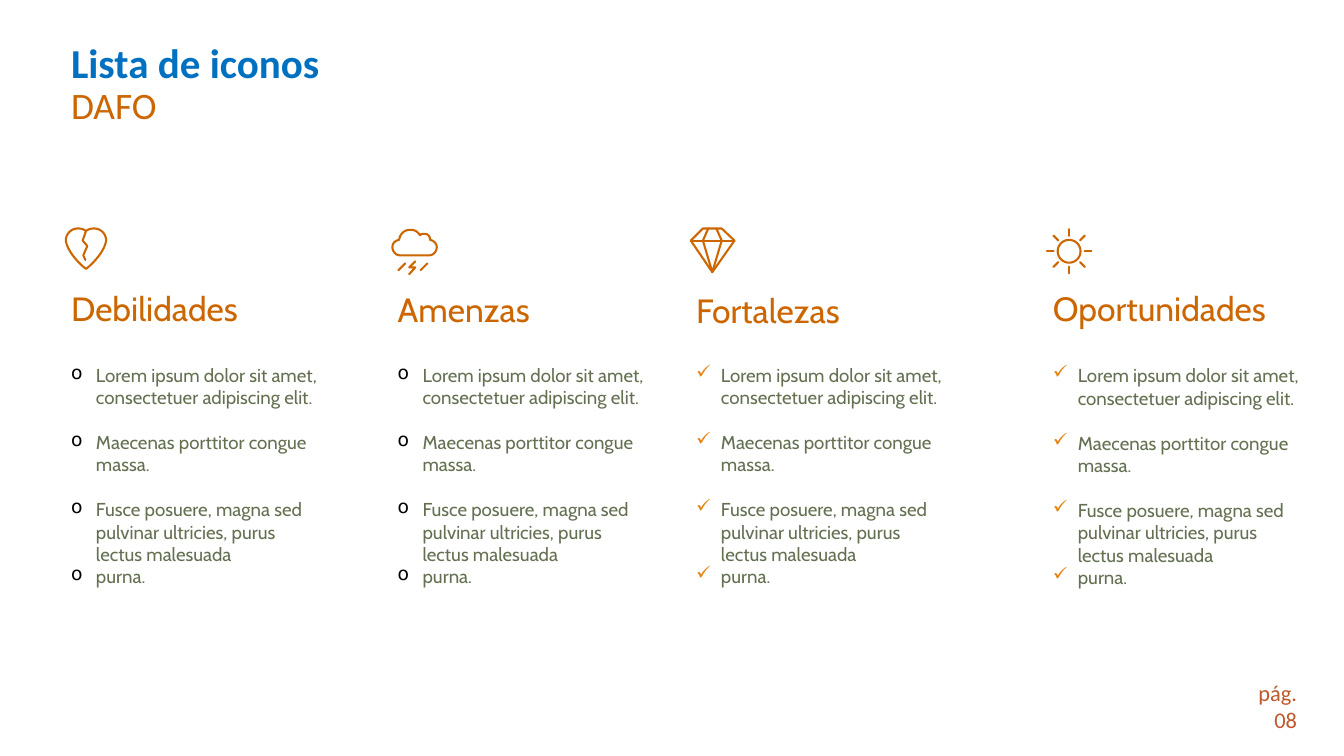
from math import cos, pi, sin

from lxml import etree
from pptx import Presentation
from pptx.dml.color import RGBColor
from pptx.enum.text import MSO_ANCHOR, MSO_AUTO_SIZE, PP_ALIGN
from pptx.oxml.ns import qn
from pptx.util import Inches, Pt

RIGHT = PP_ALIGN.RIGHT
MIDDLE = MSO_ANCHOR.MIDDLE
GROW = MSO_AUTO_SIZE.SHAPE_TO_FIT_TEXT

ORANGE = RGBColor(0xCC, 0x66, 0x00)
BLUE = RGBColor(0x00, 0x70, 0xC0)
OLIVE = RGBColor(0x63, 0x70, 0x52)
RUST = RGBColor(0xBD, 0x58, 0x2C)

CIRCLE_MARK = ("o", "000000")
CHECK_MARK = ("✓", "E48312")
CURVE_STEPS = 10

POINTS = [
    ("Lorem ipsum dolor sit amet, consectetuer adipiscing elit.", 0),
    ("Maecenas porttitor congue massa.", 24),
    ("Fusce posuere, magna sed pulvinar ultricies, purus lectus malesuada", 24),
    ("purna.", 0),
]


def smooth(controls):
    """Sample a chain of cubic Bézier curves given as 3n + 1 points."""
    samples = [controls[0]]
    for i in range(0, len(controls) - 1, 3):
        a, b, c, d = controls[i:i + 4]
        for step in range(1, CURVE_STEPS + 1):
            t = step / CURVE_STEPS
            u = 1 - t
            weights = (u ** 3, 3 * u * u * t, 3 * u * t * t, t ** 3)
            samples.append(tuple(
                sum(w * p[axis] for w, p in zip(weights, (a, b, c, d))) for axis in (0, 1)
            ))
    return samples


def broken_heart():
    """Return the strokes of the heart and its crack."""
    right = smooth([
        (0.32, 0.06), (0.35, 0.03), (0.4, 0.02), (0.44, 0.02),
        (0.54, 0.02), (0.62, 0.1), (0.62, 0.2),
        (0.6, 0.38), (0.36, 0.6), (0.32, 0.62),
    ])
    left = [(0.64 - x, y) for x, y in reversed(right)]
    crack = [(0.32, 0.06), (0.27, 0.2), (0.34, 0.28), (0.28, 0.42), (0.31, 0.49)]
    return [(right + left, True), (crack, False)]


def storm_cloud():
    """Return the strokes of the cloud, two drops and a bolt."""
    cloud = smooth([
        (0.13, 0.4), (0.07, 0.4), (0.02, 0.34), (0.02, 0.28),
        (0.02, 0.22), (0.06, 0.18), (0.12, 0.17),
        (0.13, 0.08), (0.2, 0.02), (0.28, 0.02),
        (0.35, 0.02), (0.39, 0.04), (0.43, 0.1),
        (0.45, 0.08), (0.47, 0.08), (0.5, 0.08),
        (0.55, 0.08), (0.58, 0.12), (0.58, 0.17),
        (0.64, 0.18), (0.68, 0.23), (0.68, 0.28),
        (0.68, 0.34), (0.63, 0.4), (0.57, 0.4),
    ])
    bolt = [(0.36, 0.49), (0.27, 0.58), (0.36, 0.58), (0.27, 0.68)]
    drops = [([(x, 0.52), (x - 0.1, 0.62)], False) for x in (0.21, 0.54)]
    return [(cloud, True), (bolt, False)] + drops


def diamond():
    """Return the strokes of the cut gem."""
    outline = [(0.2, 0.02), (0.48, 0.02), (0.67, 0.2), (0.34, 0.67), (0.02, 0.2)]
    facets = [(0.28, 0.02), (0.2, 0.2), (0.34, 0.67), (0.48, 0.2), (0.4, 0.02)]
    return [(outline, True), (facets, False), ([(0.02, 0.2), (0.67, 0.2)], False)]


def sun():
    """Return the strokes of the disc and its eight rays."""
    def around(radius, angle):
        return 0.34 + radius * cos(angle), 0.34 + radius * sin(angle)

    disc = [around(0.17, 2 * pi * i / 40) for i in range(40)]
    rays = [([around(r, i * pi / 4) for r in (0.23, 0.33)], False) for i in range(8)]
    return [(disc, True)] + rays


def add_icon(slide, left, top, strokes):
    """Draw all strokes of an icon as one outlined freeform."""
    builder = None
    for points, closed in strokes:
        vertices = [(Inches(left + x), Inches(top + y)) for x, y in points]
        if builder is None:
            builder = slide.shapes.build_freeform(*vertices[0])
        else:
            builder.move_to(*vertices[0])
        builder.add_line_segments(vertices[1:], close=closed)
    icon = builder.convert_to_shape()
    icon.shadow.inherit = False
    icon.fill.background()
    icon.line.color.rgb = ORANGE
    icon.line.width = Pt(2.2)
    outline = icon.line._get_or_add_ln()
    outline.set("cap", "rnd")
    etree.SubElement(outline, qn("a:round"))


def add_text_frame(slide, left, top, width, height):
    """Add a wrapping text box that grows with its text."""
    box = slide.shapes.add_textbox(Inches(left), Inches(top), Inches(width), Inches(height))
    frame = box.text_frame
    frame.word_wrap = True
    frame.auto_size = GROW
    return frame


def style(font, name, size, color):
    """Set typeface, size and colour."""
    font.name = name
    font.size = Pt(size)
    font.color.rgb = color


def add_bullet(paragraph, mark, color):
    """Give a paragraph a hanging coloured bullet."""
    properties = paragraph._p.get_or_add_pPr()
    properties.set("marL", str(Inches(0.37)))
    properties.set("indent", str(-Inches(0.37)))
    bullet_color = etree.SubElement(properties, qn("a:buClr"))
    etree.SubElement(bullet_color, qn("a:srgbClr"), val=color)
    etree.SubElement(properties, qn("a:buChar"), char=mark)


def add_title(slide):
    """Add the two-line title."""
    frame = add_text_frame(slide, 0.96, 0.59, 5.96, 1.37)
    frame.vertical_anchor = MIDDLE
    paragraph = frame.paragraphs[0]
    paragraph.line_spacing = 0.9
    heading = paragraph.add_run()
    heading.text = "Lista de iconos"
    style(heading.font, "Calibri", 44, BLUE)
    heading.font.bold = True
    paragraph.add_line_break()
    subject = paragraph.add_run()
    subject.text = "DAFO"
    style(subject.font, "Calibri", 40, ORANGE)


def add_page_number(slide):
    """Add the page label at the lower right."""
    frame = add_text_frame(slide, 17.5, 10.06, 1.9, 0.91)
    frame.text = "pág.\n08"
    for paragraph in frame.paragraphs:
        paragraph.alignment = RIGHT
        style(paragraph.font, "Calibri", 24, RUST)


def add_heading(slide, left, top, heading):
    """Add the name of a column."""
    paragraph = add_text_frame(slide, left, top, 4, 0.71).paragraphs[0]
    paragraph.text = heading
    style(paragraph.font, "Cabin", 36, ORANGE)


def add_points(slide, left, top, bullet):
    """Add the bulleted points of a column."""
    frame = add_text_frame(slide, left, top, 3.92, 3.48)
    for i, (point, gap) in enumerate(POINTS):
        paragraph = frame.add_paragraph() if i else frame.paragraphs[0]
        paragraph.text = point
        if gap:
            paragraph.space_before = Pt(gap)
        add_bullet(paragraph, *bullet)
        style(paragraph.font, "Cabin", 20, OLIVE)


def main():
    """Build the slide and save it."""
    presentation = Presentation()
    presentation.slide_width = Inches(20)
    presentation.slide_height = Inches(11.25)
    slide = presentation.slides.add_slide(presentation.slide_layouts[6])
    add_title(slide)
    columns = [
        ("Debilidades", 0.96, 3.38, 4.23, 5.36, broken_heart, CIRCLE_MARK),
        ("Amenzas", 5.82, 3.4, 4.25, 5.36, storm_cloud, CIRCLE_MARK),
        ("Fortalezas", 10.26, 3.38, 4.27, 5.36, diamond, CHECK_MARK),
        ("Oportunidades", 15.57, 3.4, 4.24, 5.37, sun, CHECK_MARK),
    ]
    for heading, left, icon_top, heading_top, points_top, icon, bullet in columns:
        add_icon(slide, left, icon_top, icon())
        add_heading(slide, left, heading_top, heading)
        add_points(slide, left, points_top, bullet)
    add_page_number(slide)
    presentation.save("out.pptx")


if __name__ == "__main__":
    main()
